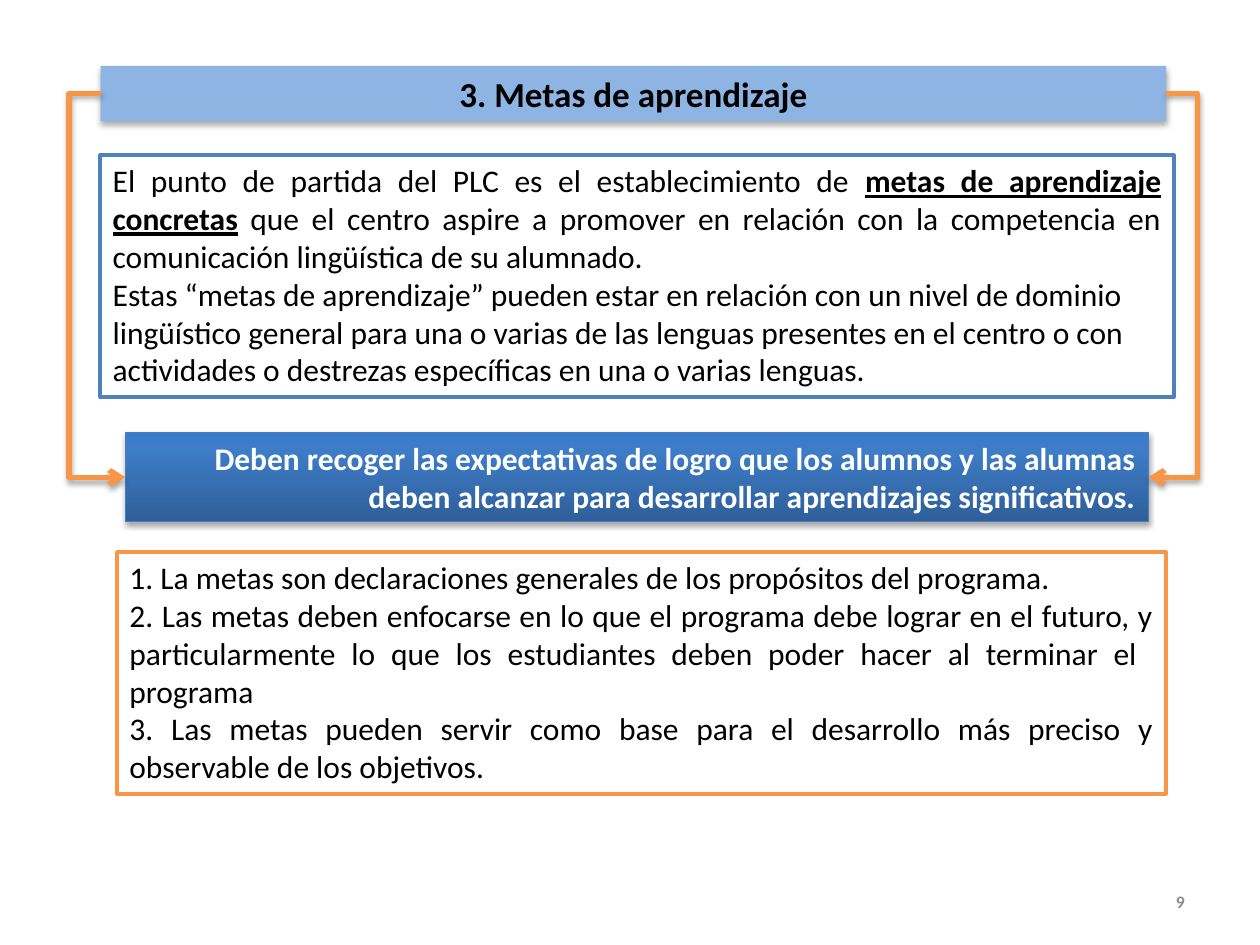
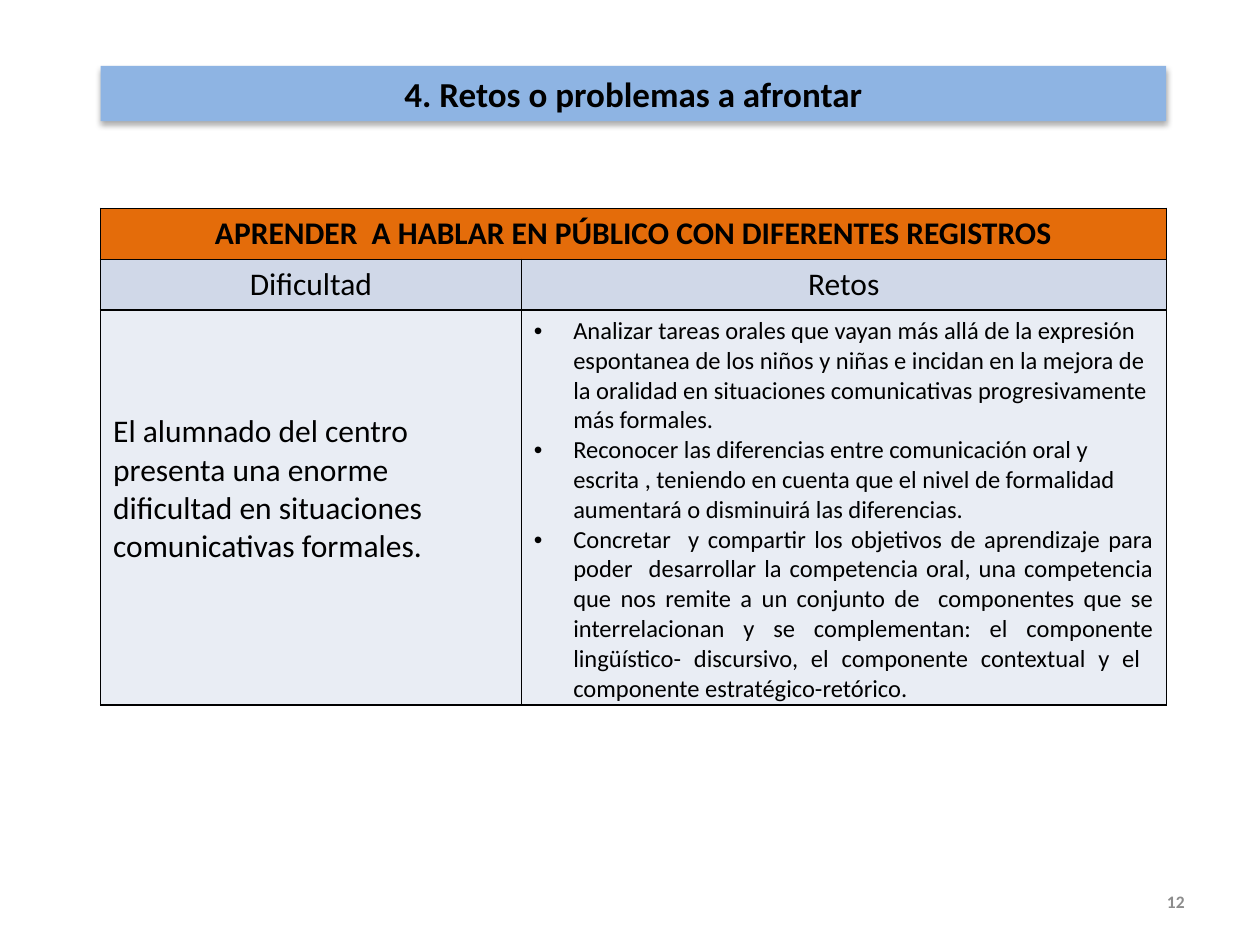
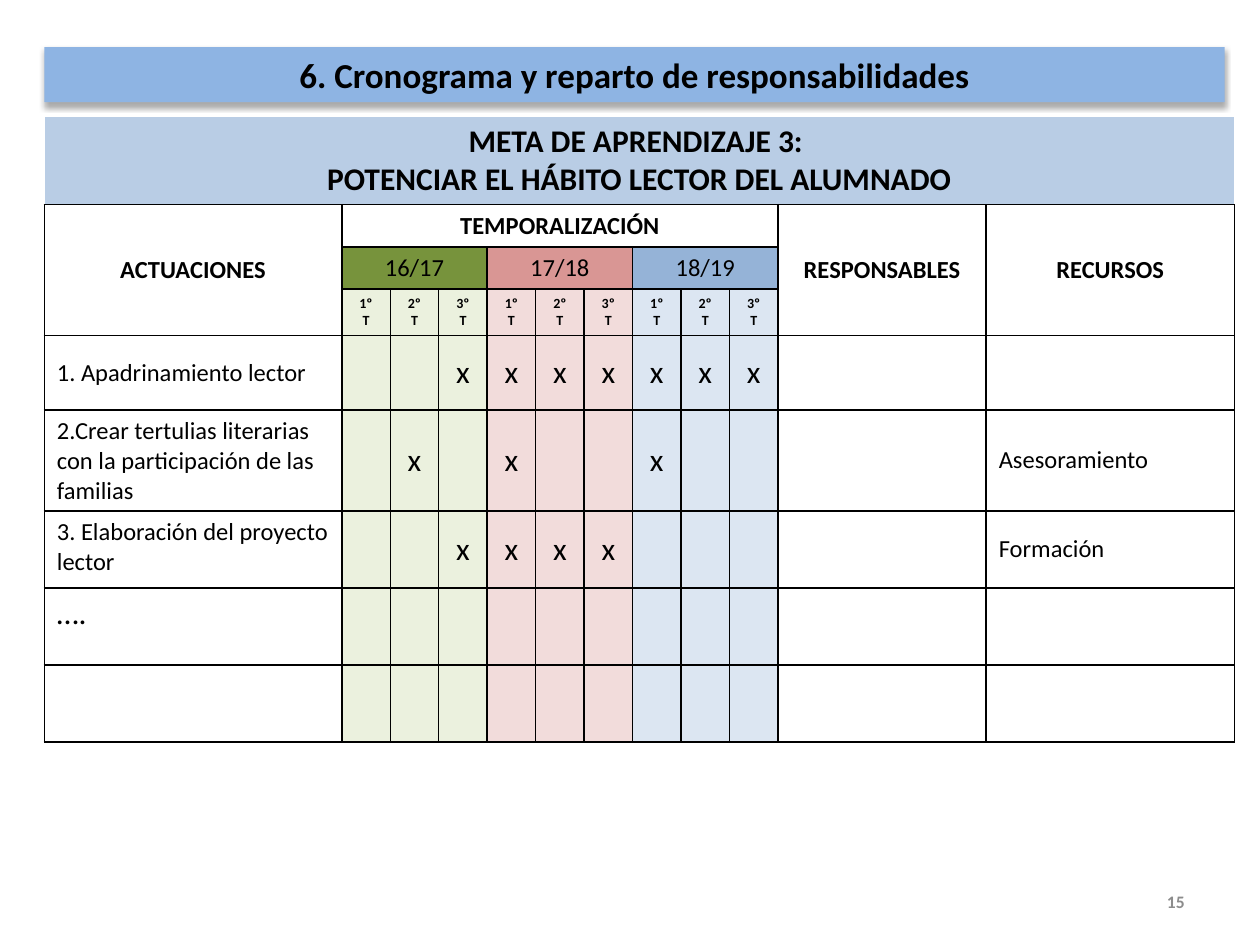
from lxml.etree import SubElement
from pptx import Presentation
from pptx.dml.color import RGBColor
from pptx.enum.shapes import MSO_CONNECTOR, MSO_SHAPE
from pptx.enum.text import MSO_ANCHOR, PP_ALIGN
from pptx.oxml.ns import qn
from pptx.util import Pt

FONT = "Calibri"
BLACK, WHITE, GREY = "000000", "FFFFFF", "8C8C8C"
TITLE_BLUE, BLUE, ORANGE = "8EB4E3", "4F81BD", "F79646"
TITLE_SHADOW = (32, 3.5, 2.2)
SOFT_SHADOW = (35, 3.1, 1.8)
TITLE_AREA = (57.5, 37.7, 609, 31.5)
WIDE_TITLE_AREA = (25.3, 26.9, 674.5, 31.5)
NUMBER_AREA = (649.5, 500.5, 34.5, 29)
LEFT, CENTER, RIGHT, JUSTIFY = (
    PP_ALIGN.LEFT, PP_ALIGN.CENTER, PP_ALIGN.RIGHT, PP_ALIGN.JUSTIFY)


def color(value):
    return RGBColor.from_string(value)


def write(frame, text, size=18, bold=False, ink=BLACK, align=LEFT,
          emphasis=None, bullet=None, hang=22.5):
    para = frame.add_paragraph() if frame.text else frame.paragraphs[0]
    para.alignment = align
    if bullet:
        properties = para._p.get_or_add_pPr()
        properties.set("marL", str(Pt(hang)))
        properties.set("indent", str(-Pt(hang)))
        SubElement(properties, qn("a:buFont"), typeface="Arial")
        SubElement(properties, qn("a:buChar"), char=bullet)
    pieces = text.partition(emphasis) if emphasis else (text,)
    for piece in pieces:
        span = para.add_run()
        span.text = piece
        span.font.name = FONT
        span.font.size = Pt(size)
        span.font.bold = bold or piece == emphasis
        span.font.underline = piece == emphasis
        span.font.color.rgb = color(ink)


def add_shadow(effects, opacity, blur, distance):
    shadow = SubElement(effects, qn("a:outerShdw"), blurRad=str(Pt(blur)),
                        dist=str(Pt(distance)), dir="5400000", rotWithShape="0")
    shade = SubElement(shadow, qn("a:srgbClr"), val=BLACK)
    SubElement(shade, qn("a:alpha"), val=str(opacity * 1000))


def add_box(page, area, fill=WHITE, line=None, line_width=2, shadow=None):
    box = page.shapes.add_shape(MSO_SHAPE.RECTANGLE, *map(Pt, area))
    box.shadow.inherit = False
    if shadow:
        add_shadow(box._element.spPr.find(qn("a:effectLst")), *shadow)
    box.fill.solid()
    box.fill.fore_color.rgb = color(fill)
    if line:
        box.line.color.rgb = color(line)
        box.line.width = Pt(line_width)
    else:
        box.line.fill.background()
    box.text_frame.word_wrap = True
    box.text_frame.vertical_anchor = MSO_ANCHOR.TOP
    return box


def shade_upwards(box, stops):
    box.fill.gradient()
    box.fill.gradient_angle = 90
    stop_list = box._element.spPr.find(".//" + qn("a:gsLst"))
    stop_list.clear()
    for position, value in stops:
        stop = SubElement(stop_list, qn("a:gs"), pos=str(position * 1000))
        SubElement(stop, qn("a:srgbClr"), val=value)


def add_page(deck, title, number, title_area=TITLE_AREA):
    page = deck.slides.add_slide(deck.slide_layouts[6])
    number_box = page.shapes.add_textbox(*map(Pt, NUMBER_AREA))
    number_box.text_frame.word_wrap = True
    number_box.text_frame.vertical_anchor = MSO_ANCHOR.MIDDLE
    write(number_box.text_frame, str(number), size=10, bold=True, ink=GREY,
          align=RIGHT)
    title_box = add_box(page, title_area, TITLE_BLUE, shadow=TITLE_SHADOW)
    write(title_box.text_frame, title, size=20, bold=True, align=CENTER)
    return page


def add_bracket(page, start, end, lane):
    (start_x, start_y), (end_x, end_y) = start, end
    bracket = page.shapes.add_connector(
        MSO_CONNECTOR.ELBOW, Pt(start_x), Pt(start_y), Pt(end_x), Pt(end_y))
    bracket.line.color.rgb = color(ORANGE)
    bracket.line.width = Pt(3)
    properties = bracket._element.spPr
    SubElement(properties.find(qn("a:ln")), qn("a:tailEnd"), type="arrow")
    add_shadow(SubElement(properties, qn("a:effectLst")), *SOFT_SHADOW)
    bend = round((lane - start_x) / (end_x - start_x) * 100000)
    guides = properties.find(".//" + qn("a:avLst"))
    SubElement(guides, qn("a:gd"), name="adj1", fmla=f"val {bend}")


def join_by_sides(page, upper, lower, reach=18):
    upper_left, upper_top, upper_width, upper_height = upper
    lower_left, lower_top, lower_width, lower_height = lower
    upper_y = upper_top + upper_height / 2
    lower_y = lower_top + lower_height / 2
    upper_right = upper_left + upper_width
    add_bracket(page, (upper_left, upper_y), (lower_left, lower_y),
                upper_left - reach)
    add_bracket(page, (upper_right, upper_y),
                (lower_left + lower_width, lower_y), upper_right + reach)


def add_table(page, left, top, widths, heights):
    frame = page.shapes.add_table(len(heights), len(widths), Pt(left), Pt(top),
                                  Pt(sum(widths)), Pt(sum(heights)))
    table = frame.table
    table.first_row = table.horz_banding = False
    for column, width in zip(table.columns, widths):
        column.width = Pt(width)
    for row, height in zip(table.rows, heights):
        row.height = Pt(height)
    return table


def style_cell(cell, fill, sides=BLACK, top=BLACK):
    cell.fill.solid()
    cell.fill.fore_color.rgb = color(fill)
    properties = cell._tc.get_or_add_tcPr()
    edges = {"L": sides, "R": sides, "T": top, "B": BLACK}
    for index, (side, ink) in enumerate(edges.items()):
        edge = SubElement(properties, qn("a:ln" + side), w=str(Pt(1)))
        SubElement(SubElement(edge, qn("a:solidFill")), qn("a:srgbClr"), val=ink)
        properties.insert(index, edge)


def fill_cell(cell, text, anchor=MSO_ANCHOR.MIDDLE, **text_format):
    cell.vertical_anchor = anchor
    write(cell.text_frame, text, **text_format)


def build_goals(deck):
    page = add_page(deck, "3. Metas de aprendizaje", 9)
    start_box = add_box(page, (57.3, 88.7, 613.5, 138.3), line=BLUE)
    write(start_box.text_frame,
          "El punto de partida del PLC es el establecimiento de metas de "
          "aprendizaje concretas que el centro aspire a promover en relación con "
          "la competencia en comunicación lingüística de su alumnado. ",
          align=JUSTIFY, emphasis="metas de aprendizaje concretas")
    write(start_box.text_frame,
          "Estas “metas de aprendizaje” pueden estar en relación con un nivel de "
          "dominio lingüístico general para una o varias de las lenguas presentes "
          "en el centro o con actividades o destrezas específicas en una o varias "
          "lenguas.")

    band_area = (71.7, 247.3, 584.5, 50.9)
    band = add_box(page, band_area, line="4B7EBC", line_width=0.75,
                   shadow=SOFT_SHADOW)
    shade_upwards(band, [(0, "2F5F99"), (80, "3D7CC7"), (100, "3A7CCB")])
    write(band.text_frame,
          "Deben recoger las expectativas de logro que los alumnos y las alumnas "
          "deben alcanzar para desarrollar aprendizajes significativos.",
          bold=True, ink=WHITE, align=RIGHT)

    goals_box = add_box(page, (66.9, 315.4, 599.3, 138.3), line=ORANGE)
    write(goals_box.text_frame,
          "1. La metas son declaraciones generales de los propósitos del programa.")
    for goal in (
            "2. Las metas deben enfocarse en lo que el programa debe lograr en el "
            "futuro, y particularmente lo que los estudiantes deben poder hacer al "
            "terminar el  programa",
            "3. Las metas pueden servir como base para el desarrollo más preciso y "
            "observable de los objetivos."):
        write(goals_box.text_frame, goal, align=JUSTIFY)
    join_by_sides(page, TITLE_AREA, band_area)


def build_challenges(deck):
    page = add_page(deck, "4. Retos o problemas a afrontar", 12)
    table = add_table(page, 57.5, 119, [240.4, 368.6], [29.2, 28.8, 225.7])
    for row, fill in enumerate(("E46C0A", "D0D8E8", "E9EDF4")):
        for cell in table.rows[row].cells:
            style_cell(cell, fill)
    table.cell(0, 0).merge(table.cell(0, 1))
    fill_cell(table.cell(0, 0),
              "APRENDER  A HABLAR EN PÚBLICO CON DIFERENTES REGISTROS",
              bold=True, align=CENTER)
    for column, heading in enumerate(("Dificultad", "Retos")):
        fill_cell(table.cell(1, column), heading, align=CENTER)

    difficulty, challenges = table.rows[2].cells
    difficulty.margin_bottom = Pt(24)
    fill_cell(difficulty,
              "El alumnado del centro presenta una enorme dificultad en "
              "situaciones comunicativas formales.")
    challenges.margin_bottom = 0
    for text, align in (
            ("Analizar tareas orales que vayan más allá de la expresión espontanea "
             "de los niños y niñas e incidan en la mejora de la oralidad en "
             "situaciones comunicativas progresivamente más formales.", LEFT),
            ("Reconocer las diferencias entre comunicación oral y escrita , "
             "teniendo en cuenta que el nivel de formalidad aumentará o disminuirá "
             "las diferencias.", LEFT),
            ("Concretar  y compartir los objetivos de aprendizaje para poder  "
             "desarrollar la competencia oral, una competencia que nos remite a un "
             "conjunto de  componentes que se interrelacionan y se complementan: "
             "el componente lingüístico- discursivo, el componente contextual y "
             "el  componente estratégico-retórico.", JUSTIFY)):
        fill_cell(challenges, text, anchor=MSO_ANCHOR.TOP, size=14, align=align,
                  bullet="•")


def build_schedule(deck):
    page = add_page(deck, "6. Cronograma y reparto de responsabilidades", 15,
                    WIDE_TITLE_AREA)
    years = [("16/17", "77933C", "EBF1DE"), ("17/18", "D99694", "F2DCDB"),
             ("18/19", "95B3D7", "DCE6F2")]
    actions = [
        ("1. Apadrinamiento lector", "--xxxxxxx", "", 14, MSO_ANCHOR.MIDDLE),
        ("2.Crear tertulias literarias con la participación de las familias",
         "-x-x--x--", "Asesoramiento", 14, MSO_ANCHOR.TOP),
        ("3. Elaboración del proyecto lector", "--xxxx---", "Formación", 14,
         MSO_ANCHOR.TOP),
        ("….", "", "", 18, MSO_ANCHOR.TOP)]
    table = add_table(page, 25.3, 66.3, [170] + [27.7] * 9 + [119, 141.8],
                      [50.7, 24, 24, 26.7, 42.5, 57.6, 44, 44, 44])

    for row_index, row in enumerate(table.rows):
        for column, cell in enumerate(row.cells):
            if row_index == 0:
                style_cell(cell, "B9CDE5", sides=WHITE, top=WHITE)
            elif row_index == 1 or not 1 <= column <= 9:
                style_cell(cell, WHITE)
            else:
                year, strong, pale = years[(column - 1) // 3]
                style_cell(cell, strong if row_index == 2 else pale)

    table.cell(0, 0).merge(table.cell(0, 11))
    for line in ("META DE APRENDIZAJE 3: ",
                 "POTENCIAR EL HÁBITO LECTOR DEL ALUMNADO"):
        fill_cell(table.cell(0, 0), line, bold=True, align=CENTER)
    for column, last_row, last_column, heading in (
            (0, 3, 0, "ACTUACIONES"), (1, 1, 9, "TEMPORALIZACIÓN"),
            (10, 3, 10, "RESPONSABLES"), (11, 3, 11, "RECURSOS")):
        table.cell(1, column).merge(table.cell(last_row, last_column))
        fill_cell(table.cell(1, column), heading, size=14, bold=True, align=CENTER)

    for index, (year, strong, pale) in enumerate(years):
        first = 1 + 3 * index
        table.cell(2, first).merge(table.cell(2, first + 2))
        fill_cell(table.cell(2, first), year, size=14, align=CENTER)
        for term in range(3):
            cell = table.cell(3, first + term)
            cell.margin_left = cell.margin_right = Pt(8)
            fill_cell(cell, f"{term + 1}º T", size=8, bold=True, align=CENTER)

    for row, (action, marks, resource, size, anchor) in enumerate(actions, 4):
        fill_cell(table.cell(row, 0), action, anchor=anchor, size=size)
        for column, mark in enumerate(marks, 1):
            if mark == "x":
                fill_cell(table.cell(row, column), mark, align=CENTER)
        if resource:
            fill_cell(table.cell(row, 11), resource, size=14)


def main():
    deck = Presentation()
    deck.slide_width, deck.slide_height = Pt(720), Pt(540)
    build_goals(deck)
    build_challenges(deck)
    build_schedule(deck)
    deck.save("out.pptx")


if __name__ == "__main__":
    main()
